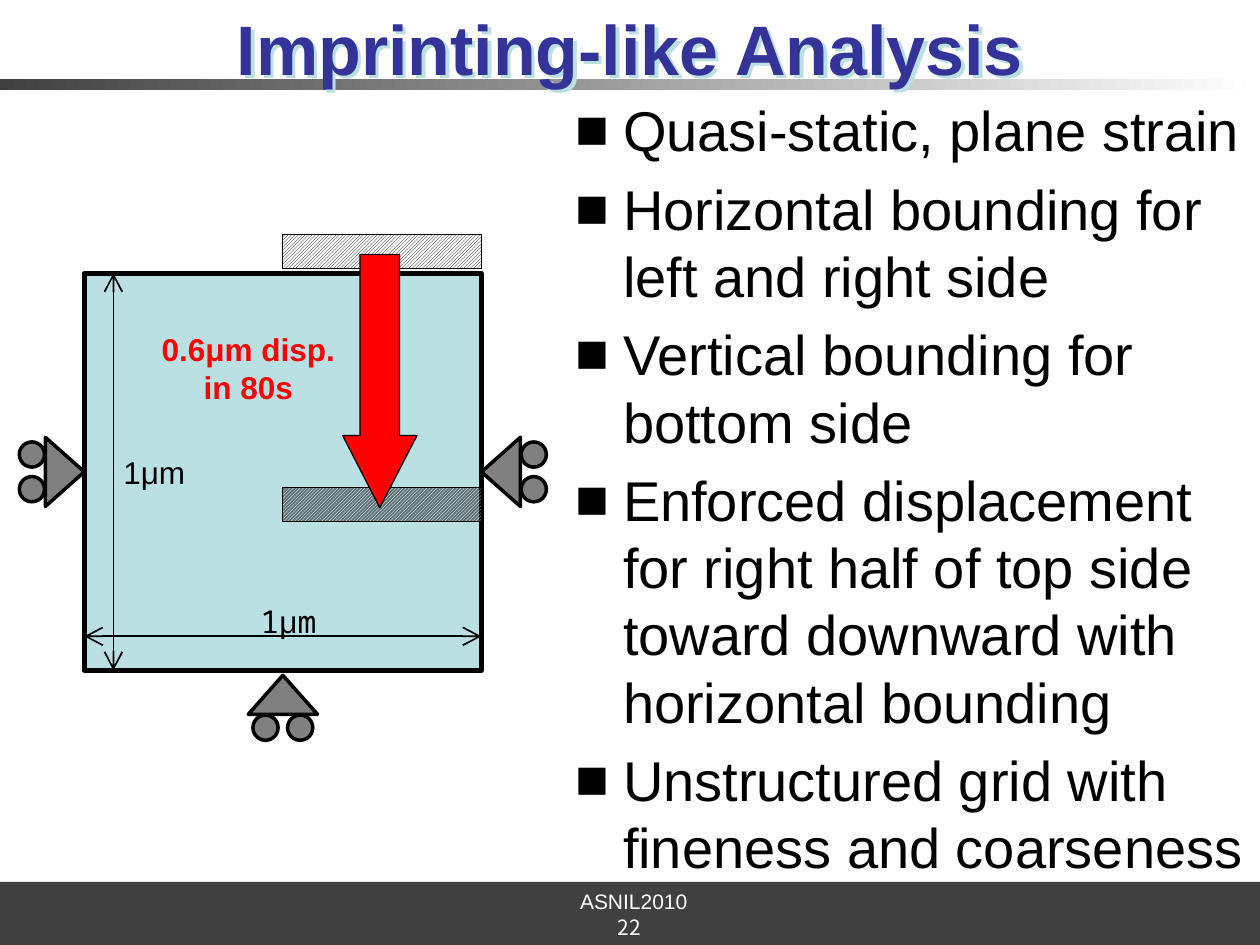
import math

import lxml.etree
import pptx
import pptx.chart.data
import pptx.dml.color
import pptx.enum.dml
import pptx.enum.shapes
import pptx.enum.text
import pptx.oxml.ns
import pptx.util

Pt = pptx.util.Pt
qn = pptx.oxml.ns.qn
SHAPE = pptx.enum.shapes.MSO_SHAPE
ALIGN = pptx.enum.text.PP_ALIGN
ANCHOR = pptx.enum.text.MSO_ANCHOR

TITLE = "Imprinting-like Analysis"
CONDITIONS = [
    "Quasi-static, plane strain",
    "Horizontal bounding for left and right side",
    "Vertical bounding for bottom side",
    "Enforced displacement for right half of top side toward downward with horizontal bounding",
    "Unstructured grid with fineness and coarseness",
]
EVENT, PAGE = "ASNIL2010", "22"
PRESS_NOTE = ["0.6μm disp.", "in 80s"]
SIDE_LENGTH = [("1", "Noto Sans Mono"), ("μ", "Arial"), ("m", "Noto Sans Mono")]
COLORS = {"band": "404040", "title": "333399", "block": "BBE0E3", "support": "808080",
          "press": "FF0000", "ink": "000000", "paper": "FFFFFF"}

WIDTH, HEIGHT = 720, 540
BLOCK_X, BLOCK_Y, BLOCK = 48.24, 156.24, 226.8
PUNCH_X, PUNCH_W, PUNCH_H = 161.3, 113.7, 19.4
PUNCHES = [(133.9, 100), (278.6, 50)]
MIDDLE_X, MIDDLE_Y = BLOCK_X + BLOCK / 2, BLOCK_Y + BLOCK / 2
SUPPORTS = [
    (MIDDLE_X, BLOCK_Y + BLOCK + 14, 0),
    (BLOCK_X + BLOCK + 11.2, MIDDLE_Y, 270),
    (BLOCK_X - 11.2, MIDDLE_Y, 90),
]
DIMENSIONS = [
    (64.8, BLOCK_Y, 64.8, BLOCK_Y + BLOCK),
    (BLOCK_X, 363.6, BLOCK_X + BLOCK, 363.6),
]


def rgb(name):
    """Return the named colour."""
    return pptx.dml.color.RGBColor.from_string(COLORS[name])


def add_solid(slide, kind, box, fill, line=0):
    """Add a preset shape with a plain fill and an optional black outline."""
    shape = slide.shapes.add_shape(kind, *map(Pt, box))
    shape.shadow.inherit = False
    shape.fill.solid()
    shape.fill.fore_color.rgb = rgb(fill)
    if line:
        shape.line.color.rgb = rgb("ink")
        shape.line.width = Pt(line)
    else:
        shape.line.fill.background()
    return shape


def set_font(paragraph, size, color, name="Arial", bold=False):
    """Format a whole paragraph."""
    font = paragraph.font
    font.size, font.name, font.bold = Pt(size), name, bold
    font.color.rgb = rgb(color)


def set_frame(shape, inset=0, wrap=True, anchor=ANCHOR.TOP):
    """Set the insets, wrapping and anchor of a text frame and return it."""
    frame = shape.text_frame
    frame.margin_left = frame.margin_right = Pt(inset)
    frame.margin_top = frame.margin_bottom = Pt(inset / 2)
    frame.word_wrap, frame.vertical_anchor = wrap, anchor
    frame.auto_size = pptx.enum.text.MSO_AUTO_SIZE.NONE
    return frame


def add_label(slide, box, lines, size, color, name="Arial", bold=False,
              align=ALIGN.CENTER, inset=7.2, anchor=ANCHOR.TOP):
    """Add a text box with one paragraph for each line."""
    frame = set_frame(slide.shapes.add_textbox(*map(Pt, box)), inset, False, anchor)
    frame.text = "\n".join(lines)
    for paragraph in frame.paragraphs:
        paragraph.alignment = align
        set_font(paragraph, size, color, name, bold)
    return frame


def add_support(slide, x, y, angle):
    """Add a triangle on two rollers, turned about the triangle's centre."""
    turn = math.radians(angle)
    parts = [(SHAPE.ISOSCELES_TRIANGLE, 0, 0, 39.6, 22.3),
             (SHAPE.OVAL, -9.9, 18.8, 14.4, 14.4), (SHAPE.OVAL, 9.9, 18.8, 14.4, 14.4)]
    for kind, along, out, w, h in parts:
        center_x = x + along * math.cos(turn) - out * math.sin(turn)
        center_y = y + along * math.sin(turn) + out * math.cos(turn)
        part = add_solid(slide, kind, (center_x - w / 2, center_y - h / 2, w, h), "support", 2)
        part.rotation = angle


def add_punch(slide, y, opacity):
    """Add a hatched punch with the given opacity in percent."""
    punch = add_solid(slide, SHAPE.RECTANGLE, (PUNCH_X, y, PUNCH_W, PUNCH_H), "paper", 0.75)
    punch.fill.patterned()
    punch.fill.pattern = pptx.enum.dml.MSO_PATTERN.DARK_UPWARD_DIAGONAL
    punch.fill.fore_color.rgb, punch.fill.back_color.rgb = rgb("ink"), rgb("paper")
    if opacity < 100:
        for color in punch._element.spPr.find(qn("a:pattFill")).iter(qn("a:srgbClr")):
            lxml.etree.SubElement(color, qn("a:alpha"), val=str(opacity * 1000))


def add_dimension(slide, *ends):
    """Add a thin line with open arrowheads at both ends."""
    line = slide.shapes.add_connector(pptx.enum.shapes.MSO_CONNECTOR.STRAIGHT, *map(Pt, ends))
    line.line.color.rgb, line.line.width = rgb("ink"), Pt(1)
    outline = line.line._get_or_add_ln()
    for end in ("a:headEnd", "a:tailEnd"):
        lxml.etree.SubElement(outline, qn(end), type="arrow", w="lg", len="lg")
    lxml.etree.SubElement(line._element.spPr, qn("a:effectLst"))


def place(shape, box):
    """Move a placeholder."""
    shape.left, shape.top, shape.width, shape.height = map(Pt, box)


def fill_title(title):
    """Write the title with its pale offset shadow."""
    place(title, (0, 2.9, WIDTH, 49))
    frame = set_frame(title)
    frame.text = TITLE
    frame.paragraphs[0].alignment = ALIGN.CENTER
    set_font(frame.paragraphs[0], 40, "title", bold=True)
    title.fill.background()
    effects = lxml.etree.SubElement(title._element.spPr, qn("a:effectLst"))
    shadow = lxml.etree.SubElement(effects, qn("a:outerShdw"), dist="35921", dir="2700000")
    lxml.etree.SubElement(shadow, qn("a:srgbClr"), val=COLORS["block"])


def fill_conditions(body):
    """Write the bulleted list of conditions."""
    place(body, (329, 54.7, 391, 439.2))
    frame = set_frame(body)
    frame.text = "\n".join(CONDITIONS)
    for number, paragraph in enumerate(frame.paragraphs):
        properties = paragraph._p.get_or_add_pPr()
        properties.set("marL", str(Pt(27)))
        properties.set("indent", str(-Pt(27)))
        paragraph.space_before = Pt(6.4 if number else 0)
        lxml.etree.SubElement(properties, qn("a:buChar"), char="■")
        set_font(paragraph, 32, "ink")


def main():
    """Build the slide."""
    deck = pptx.Presentation()
    deck.slide_width, deck.slide_height = Pt(WIDTH), Pt(HEIGHT)
    slide = deck.slides.add_slide(deck.slide_layouts[1])

    rule = add_solid(slide, SHAPE.RECTANGLE, (0, 45.4, WIDTH, 5.8), "band")
    rule.fill.gradient()
    rule.fill.gradient_angle = 0
    for stop, color in zip(rule.fill.gradient_stops, ("band", "paper")):
        stop.color.rgb = rgb(color)
    slide.shapes._spTree.insert(2, rule._element)
    fill_title(slide.shapes.title)
    fill_conditions(slide.placeholders[1])

    add_solid(slide, SHAPE.RECTANGLE, (0, 504, WIDTH, 36), "band")
    add_label(slide, (331.2, 507.6, 61.9, 13.7), [EVENT], 12, "paper", inset=0)
    add_label(slide, (318.2, 522, 82.8, 15.8), [PAGE], 12, "paper", "Noto Sans CJK JP",
              anchor=ANCHOR.MIDDLE)

    add_solid(slide, SHAPE.RECTANGLE, (BLOCK_X, BLOCK_Y, BLOCK, BLOCK), "block", 3)
    for support in SUPPORTS:
        add_support(slide, *support)
    for punch in PUNCHES:
        add_punch(slide, *punch)
    press = add_solid(slide, SHAPE.DOWN_ARROW, (195.8, 145.4, 42.5, 144.7), "press", 0.75)
    press.adjustments[0], press.adjustments[1] = 0.53, 0.97
    add_label(slide, (85, 185, 113.8, 51.1), PRESS_NOTE, 18, "press", bold=True)

    for dimension in DIMENSIONS:
        add_dimension(slide, *dimension)
    height = "".join(text for text, _ in SIDE_LENGTH)
    add_label(slide, (63.4, 255.6, 50.4, 28.8), [height], 18, "ink", align=ALIGN.LEFT)
    width = add_label(slide, (141.8, 340.6, 50.4, 28.8), [""], 18, "ink", align=ALIGN.LEFT)
    for text, font_name in SIDE_LENGTH:
        run = width.paragraphs[0].add_run()
        run.text, run.font.name = text, font_name


    deck.save("out.pptx")


if __name__ == "__main__":
    main()
